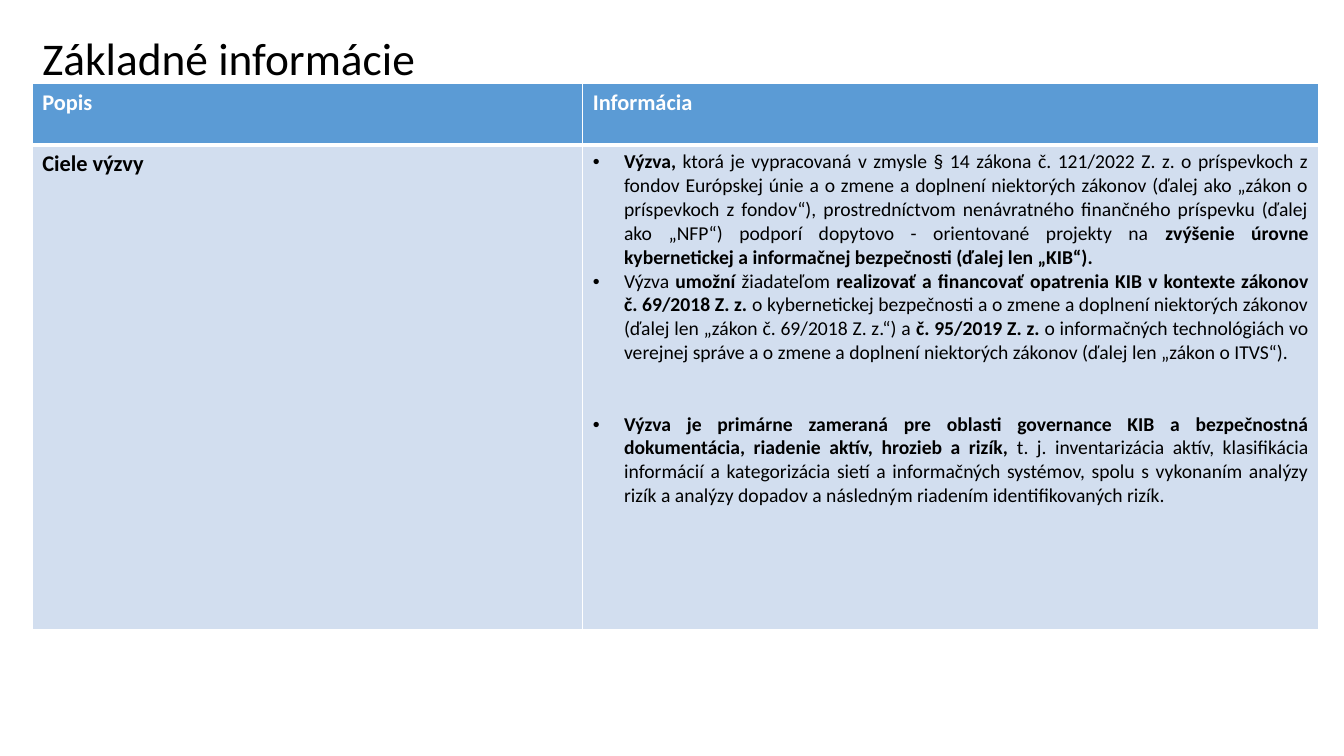
from lxml.etree import SubElement
from pptx import Presentation
from pptx.dml.color import RGBColor
from pptx.enum.text import MSO_ANCHOR, MSO_AUTO_SIZE, PP_ALIGN
from pptx.oxml import parse_xml
from pptx.oxml.ns import nsdecls, qn
from pptx.util import Inches, Pt

COLORS = {"text": "000000", "white": "FFFFFF", "header": "5B9BD5", "body": "D2DEEF"}

GOALS = [
    ("**Výzva,** ktorá je vypracovaná v zmysle § 14 zákona č. 121/2022 Z. z. o príspevkoch z fondov "
     "Európskej únie a o zmene a doplnení niektorých zákonov (ďalej ako „zákon o príspevkoch z fondov“), "
     "prostredníctvom nenávratného finančného príspevku (ďalej ako „NFP“) podporí dopytovo - orientované "
     "projekty na **zvýšenie úrovne kybernetickej a informačnej bezpečnosti (ďalej len „KIB“). **", 0),
    ("Výzva **umožní** žiadateľom **realizovať a financovať opatrenia KIB v kontexte zákonov "
     "č. 69/2018 Z. z. **o kybernetickej bezpečnosti a o zmene a doplnení niektorých zákonov "
     "(ďalej len „zákon č. 69/2018 Z. z.“) a **č. 95/2019 Z. z. **o informačných technológiách vo "
     "verejnej správe a o zmene a doplnení niektorých zákonov (ďalej len „zákon o ITVS“).", 0),
    ("**Výzva je primárne zameraná pre oblasti governance KIB a bezpečnostná dokumentácia, riadenie "
     "aktív, hrozieb a rizík, **t. j. inventarizácia aktív, klasifikácia informácií a kategorizácia "
     "sietí a informačných systémov, spolu s vykonaním analýzy rizík a analýzy dopadov a následným "
     "riadením identifikovaných rizík.", 34),
]


def write(paragraph, text, size, color="text", align=PP_ALIGN.LEFT):
    paragraph.alignment = align
    for index, part in enumerate(text.split("**")):
        if part:
            run = paragraph.add_run()
            run.text = part
            run.font.name = "Calibri"
            run.font.size = Pt(size)
            run.font.bold = index % 2 == 1
            run.font.color.rgb = RGBColor.from_string(COLORS[color])


presentation = Presentation()
presentation.slide_width = Inches(13.33)
presentation.slide_height = Inches(7.5)
slide = presentation.slides.add_slide(presentation.slide_layouts[5])

title = slide.shapes.title
title.left, title.top = Inches(0.32), Inches(0.32)
title.width, title.height = Inches(10), Inches(0.51)
title_frame = title.text_frame
title_frame.auto_size = MSO_AUTO_SIZE.NONE
title_frame.vertical_anchor = MSO_ANCHOR.MIDDLE
title_frame.margin_top = Inches(0.11)
title_frame.paragraphs[0].line_spacing = 0.9
write(title_frame.paragraphs[0], "Základné informácie", 32.4)

table = slide.shapes.add_table(
    2, 2, Inches(0.32), Inches(0.83), Inches(12.76), Inches(5.42)).table
for column, width in zip(table.columns, (5.46, 7.3)):
    column.width = Inches(width)
for row, height in zip(table.rows, (0.61, 4.81)):
    row.height = Inches(height)

for row_index, fill in enumerate(("header", "body")):
    for cell in table.rows[row_index].cells:
        cell.fill.solid()
        cell.fill.fore_color.rgb = RGBColor.from_string(COLORS[fill])
        properties = cell._tc.get_or_add_tcPr()
        for position, side in enumerate("LRTB"):
            thick = (row_index, side) in ((0, "B"), (1, "T"))
            properties.insert(position, parse_xml(
                f'<a:ln{side} {nsdecls("a")} w="{Pt(3 if thick else 1)}"><a:solidFill>'
                f'<a:srgbClr val="{COLORS["white"]}"/></a:solidFill></a:ln{side}>'))

for cell, heading in zip(table.rows[0].cells, ("Popis", "Informácia")):
    write(cell.text_frame.paragraphs[0], f"**{heading}**", 16, color="white")
write(table.cell(1, 0).text_frame.paragraphs[0], "**Ciele výzvy**", 16)

goals_frame = table.cell(1, 1).text_frame
for index, (goal, gap) in enumerate(GOALS):
    paragraph = goals_frame.add_paragraph() if index else goals_frame.paragraphs[0]
    write(paragraph, goal, 14, align=PP_ALIGN.JUSTIFY)
    paragraph.space_before = Pt(gap)
    properties = paragraph._p.get_or_add_pPr()
    properties.set("marL", str(Inches(0.31)))
    properties.set("indent", str(-Inches(0.31)))
    SubElement(properties, qn("a:buFont")).set("typeface", "Arial")
    SubElement(properties, qn("a:buChar")).set("char", "•")

presentation.save("out.pptx")
